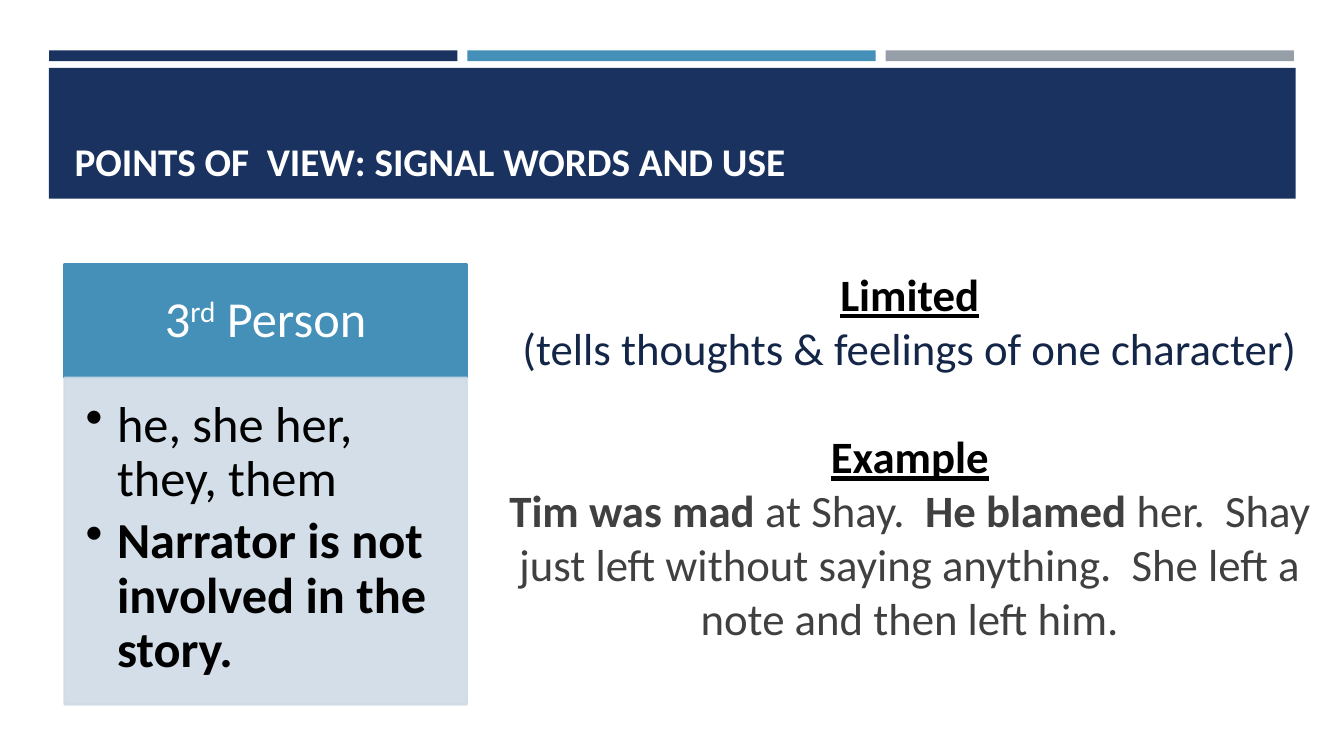
from lxml import etree
from pptx import Presentation
from pptx import util as u
from pptx.dml.color import RGBColor
from pptx.enum import shapes, text
from pptx.oxml.ns import qn

NAVY = RGBColor(0x1A, 0x32, 0x60)
BLUE = RGBColor(0x45, 0x90, 0xB8)
GREY = RGBColor(0x96, 0x9F, 0xA7)
PALE = RGBColor(0xCF, 0xDB, 0xE6)
INK = RGBColor(0x14, 0x26, 0x48)
CHARCOAL = RGBColor(0x40, 0x40, 0x40)
BLACK = RGBColor(0, 0, 0)
WHITE = RGBColor(0xFF, 0xFF, 0xFF)


def set_alpha(fill, percent):
    for clr in fill._xPr.iter(qn("a:srgbClr")):
        if clr.find(qn("a:alpha")) is None:
            etree.SubElement(clr, qn("a:alpha"), val=str(percent * 1000))


class SlideBuilder:
    font = "Calibri"

    def __init__(self, prs):
        self.s = prs.slides.add_slide(prs.slide_layouts[5])

    def rect(self, left, top, width, height, color, outlined=False, alpha=None):
        sp = self.s.shapes.add_shape(
            shapes.MSO_SHAPE.RECTANGLE,
            u.Cm(left), u.Cm(top), u.Cm(width), u.Cm(height))
        sp.shadow.inherit = False
        sp.fill.solid()
        sp.fill.fore_color.rgb = color
        if outlined:
            sp.line.color.rgb = color
            sp.line.width = u.Pt(1.75)
        else:
            sp.line.fill.background()
        if alpha:
            set_alpha(sp.fill, alpha)
            set_alpha(sp.line.fill, alpha)
        return sp

    def frame(self, sp, anchor, margins=(0.25, 0.13, 0.25, 0.13)):
        tf = sp.text_frame
        tf.word_wrap = True
        tf.auto_size = text.MSO_AUTO_SIZE.NONE
        tf.vertical_anchor = anchor
        (tf.margin_left, tf.margin_top,
         tf.margin_right, tf.margin_bottom) = map(u.Cm, margins)
        return tf

    def paragraph(self, tf, runs, size, color, align=text.PP_ALIGN.CENTER,
                  bold=False, underline=False, spacing=None, before=0, after=0):
        """Add a paragraph; runs are (text, rPr attributes) pairs."""
        p = tf.paragraphs[0]
        if p.runs:
            p = tf.add_paragraph()
        p.alignment = align
        p.line_spacing = spacing
        p.space_before, p.space_after = u.Pt(before), u.Pt(after)
        p.font.name, p.font.size = self.font, u.Pt(size)
        p.font.color.rgb = color
        p.font.bold, p.font.underline = bold, underline
        for words, attributes in runs:
            r = p.add_run()
            r.text = words
            for name, value in attributes.items():
                r._r.get_or_add_rPr().set(name, value)
        return p

    def bullet(self, tf, words, size, bold=False):
        p = self.paragraph(tf, [(words, {})], size, BLACK, text.PP_ALIGN.LEFT,
                           bold, spacing=0.9, after=5.4)
        pPr = p._p.get_or_add_pPr()
        indent = u.Cm(0.79)
        pPr.set("marL", str(indent))
        pPr.set("indent", str(-indent))
        mark = etree.Element(qn("a:buChar"), char="•")
        pPr.find(qn("a:defRPr")).addprevious(mark)

    def title(self, words, left, top, width, height):
        sp = self.s.shapes.title
        self.s.shapes._spTree.append(sp._element)  # in front of the band
        sp.left, sp.top = u.Cm(left), u.Cm(top)
        sp.width, sp.height = u.Cm(width), u.Cm(height)
        tf = self.frame(sp, text.MSO_ANCHOR.BOTTOM)
        self.paragraph(tf, [(words, {})], 28, WHITE, text.PP_ALIGN.LEFT, True)

    def textbox(self, left, top, width, height):
        sp = self.s.shapes.add_textbox(
            u.Cm(left), u.Cm(top), u.Cm(width), u.Cm(height))
        return self.frame(sp, text.MSO_ANCHOR.TOP)


def main():
    prs = Presentation()
    prs.slide_width, prs.slide_height = u.Cm(33.87), u.Cm(19.05)
    b = SlideBuilder(prs)

    for i, color in enumerate((NAVY, BLUE, GREY)):
        b.rect(1.24 + i * 10.54, 1.27, 10.29, 0.27, color)
    b.rect(1.23, 1.71, 31.42, 3.3, NAVY)
    b.title("POINTS OF  VIEW: SIGNAL WORDS AND USE", 1.63, 1.96, 30.63, 2.82)

    header = b.rect(1.63, 6.65, 10.13, 2.87, BLUE, outlined=True)
    tf = b.frame(header, text.MSO_ANCHOR.MIDDLE, (0.71, 0.41, 0.71, 0.41))
    b.paragraph(tf, [("3", {}), ("rd", {"baseline": "30000"}), (" Person", {})],
                36, WHITE, spacing=0.9)

    body = b.rect(1.63, 9.52, 10.13, 8.23, PALE, outlined=True, alpha=90)
    tf = b.frame(body, text.MSO_ANCHOR.TOP, (0.53, 0.53, 0.71, 0.81))
    b.bullet(tf, "he, she her, they, them", 36)
    b.bullet(tf, "Narrator is not involved in the story.", 36, bold=True)

    tf = b.textbox(12.01, 6.6, 21.84, 11.2)
    b.paragraph(tf, [("Limited", {})], 32, BLACK, bold=True, underline=True)
    b.paragraph(tf, [("(tells thoughts & feelings of one character)", {})],
                32, INK)
    b.paragraph(tf, [("Example", {})], 32, BLACK, bold=True, underline=True,
                before=39)
    strong = {"b": "1"}
    b.paragraph(tf, [
        ("Tim was mad", strong),
        (" at Shay.  ", {}),
        ("He blamed", strong),
        (" her.  Shay just left without saying anything.  "
         "She left a note and then left him.", {}),
    ], 32, CHARCOAL)

    prs.save("out.pptx")


if __name__ == "__main__":
    main()
